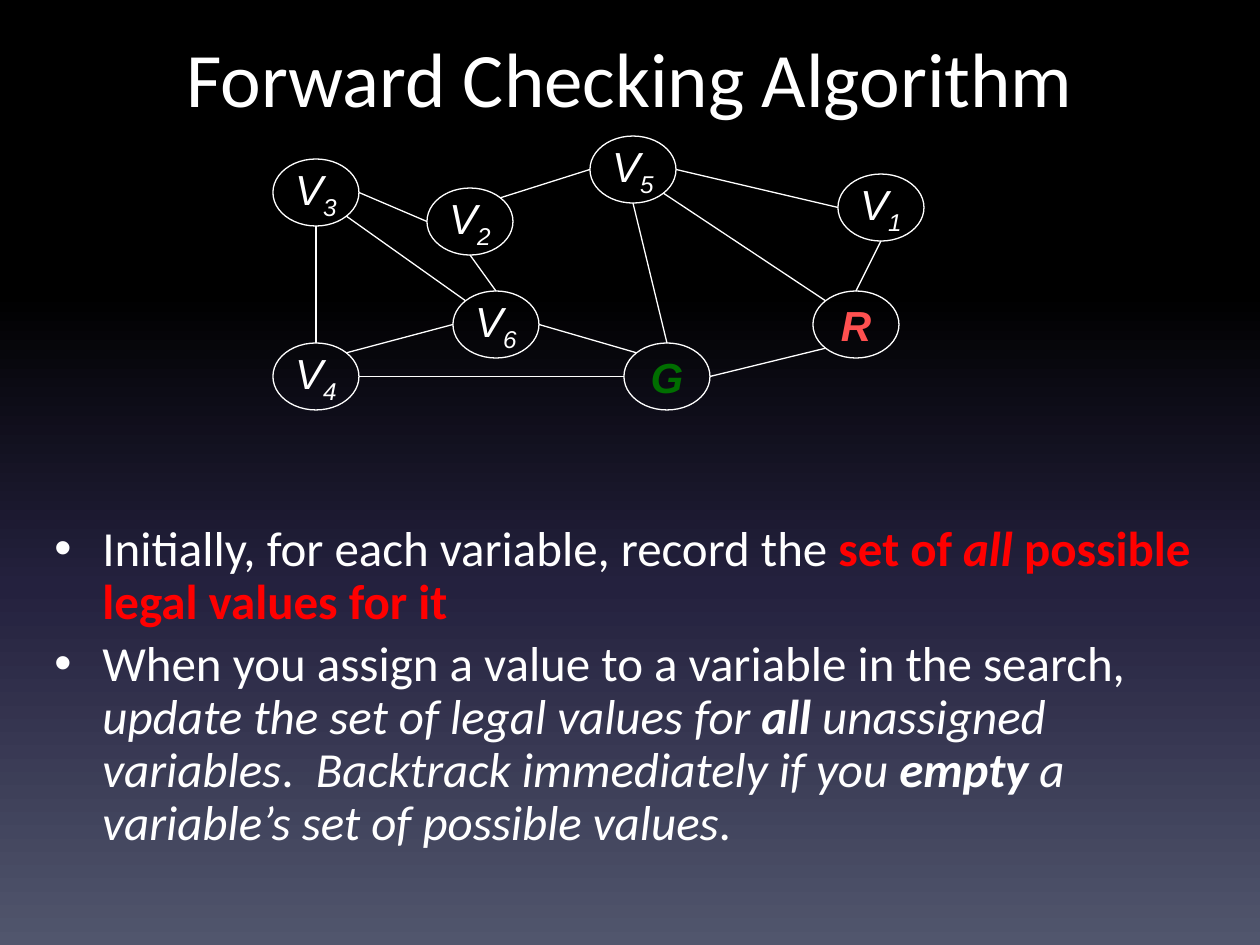
"""Build the Forward Checking Algorithm slide with its constraint graph."""
from copy import deepcopy

from lxml import etree
from pptx import Presentation
from pptx import util as u
from pptx.dml.color import RGBColor
from pptx.enum import shapes, text
from pptx.oxml.ns import qn

SCALE = 914400 / 126
COLORS = {"black": "000000", "navy": "24213E", "slate": "51566D", "white": "FFFFFF",
          "red": "FF0000", "coral": "FF5050", "green": "006E00"}
BACKGROUND = [(0, "black"), (0.31, "black"), (0.62, "navy"), (1, "slate")]
NODE_SIZE = (86, 67)
NODES = {
    "V3": (273, 159), "V6": (453, 291), "V2": (427, 188), "R": (813, 291),
    "G": (624, 343), "V1": (838, 174), "V5": (590, 136), "V4": (273, 343),
}
ASSIGNED = {"R": "coral", "G": "green"}
DIAGONAL = 0.5 ** 0.5
SIDES = {"top": (0, -1), "bottom": (0, 1), "left": (-1, 0), "right": (1, 0),
         "top left": (-DIAGONAL, -DIAGONAL), "top right": (DIAGONAL, -DIAGONAL),
         "bottom left": (-DIAGONAL, DIAGONAL), "bottom right": (DIAGONAL, DIAGONAL)}
EDGES = [
    ("V3", "bottom", "V4", "top"),
    ("V3", "right", "V2", "left"),
    ("V3", "bottom right", "V6", "top left"),
    ("V4", "right", "G", "left"),
    ("V4", "top right", "V6", "left"),
    ("V6", "top", "V2", "bottom"),
    ("V2", "top right", "V5", "left"),
    ("V5", "right", "V1", "left"),
    ("V1", "bottom", "R", "top"),
    ("G", "right", "R", "bottom left"),
    ("V5", "bottom right", "R", "top left"),
    ("V6", "right", "G", "top left"),
    ("V5", "bottom", "G", "top"),
]
STEPS = [
    [("Initially, for each variable, record the ", "", "white"),
     ("set of ", "b", "red"), ("all", "bi", "red"),
     (" possible legal values for it", "b", "red")],
    [("When you assign a value to a variable in the search, ", "", "white"),
     ("update the set of legal values for ", "i", "white"), ("all", "bi", "white"),
     (" unassigned variables", "i", "white"), (".  ", "", "white"),
     ("Backtrack immediately if you ", "i", "white"), ("empty", "bi", "white"),
     (" a variable’s set of possible values", "i", "white"), (".", "", "white")],
]


def px(length):
    return u.Emu(round(length * SCALE))


def rgb(name):
    return RGBColor.from_string(COLORS[name])


class GraphSlide:
    def __init__(self, deck):
        self.slide = deck.slides.add_slide(deck.slide_layouts[6])
        self.graph = None

    def background(self, stops):
        fill = self.slide.background.fill
        fill.gradient()
        fill.gradient_angle = 270
        stop_list = self.slide.element.find(".//" + qn("a:gsLst"))
        while len(stop_list) < len(stops):
            stop_list.append(deepcopy(stop_list[0]))
        for stop, (position, color) in zip(fill.gradient_stops, stops):
            stop.position = position
            stop.color.rgb = rgb(color)

    def style(self, run, size, font, color, marks=""):
        run.font.size = u.Pt(size)
        run.font.name = font
        run.font.color.rgb = rgb(color)
        run.font.bold = "b" in marks
        run.font.italic = "i" in marks

    def text_frame(self, left, top, width, height):
        box = self.slide.shapes.add_textbox(px(left), px(top), px(width), px(height))
        frame = box.text_frame
        frame.word_wrap = True
        frame.vertical_anchor = text.MSO_ANCHOR.MIDDLE
        return frame

    def title(self, wording, *area):
        frame = self.text_frame(*area)
        frame.text = wording
        heading = frame.paragraphs[0]
        heading.alignment = text.PP_ALIGN.CENTER
        self.style(heading.runs[0], 44, "Calibri", "white")

    def bullets(self, steps, *area):
        frame = self.text_frame(*area)
        for index, step in enumerate(steps):
            line = frame.add_paragraph() if index else frame.paragraphs[0]
            line.line_spacing = 0.9
            line.space_before = u.Pt(5.6)
            properties = line._p.get_or_add_pPr()
            properties.set("marL", str(px(48)))
            properties.set("indent", str(-px(48)))
            etree.SubElement(properties, qn("a:buFont"), typeface="Arial")
            etree.SubElement(properties, qn("a:buChar"), char="•")
            for wording, marks, color in step:
                run = line.add_run()
                run.text = wording
                self.style(run, 28, "Calibri", color, marks)

    def start_graph(self):
        self.graph = self.slide.shapes.add_group_shape().shapes

    def node(self, name):
        left, top = NODES[name]
        width, height = NODE_SIZE
        oval = self.graph.add_shape(shapes.MSO_SHAPE.FLOWCHART_CONNECTOR,
                                    px(left), px(top), px(width), px(height))
        oval.shadow.inherit = False
        oval.fill.background()
        oval.line.color.rgb = rgb("white")
        oval.line.width = u.Pt(0.75)
        frame = oval.text_frame
        frame.word_wrap = False
        frame.vertical_anchor = text.MSO_ANCHOR.MIDDLE
        label = frame.paragraphs[0]
        label.alignment = text.PP_ALIGN.CENTER
        marks = "bi" if name in ASSIGNED else "i"
        for character in name:
            run = label.add_run()
            run.text = character
            self.style(run, 24, "Arial", ASSIGNED.get(name, "white"), marks)
            if character.isdigit():
                run.font._element.set("baseline", "-25000")

    def anchor(self, name, side):
        return [px(start + size / 2 * (1 + offset))
                for start, size, offset in zip(NODES[name], NODE_SIZE, SIDES[side])]

    def edge(self, source, source_side, target, target_side):
        line = self.graph.add_connector(shapes.MSO_CONNECTOR.STRAIGHT,
                                        *self.anchor(source, source_side),
                                        *self.anchor(target, target_side))
        line.line.color.rgb = rgb("white")
        line.line.width = u.Pt(0.75)
        etree.SubElement(line._element.spPr, qn("a:effectLst"))


def main():
    deck = Presentation()
    deck.slide_width, deck.slide_height = px(1260), px(945)
    page = GraphSlide(deck)
    page.background(BACKGROUND)
    page.title("Forward Checking Algorithm", 0, 24, 1260, 105)
    page.bullets(STEPS, 42, 462, 1175, 451)
    page.start_graph()
    for name in NODES:
        page.node(name)
    for edge in EDGES:
        page.edge(*edge)
    deck.save("out.pptx")


if __name__ == "__main__":
    main()
